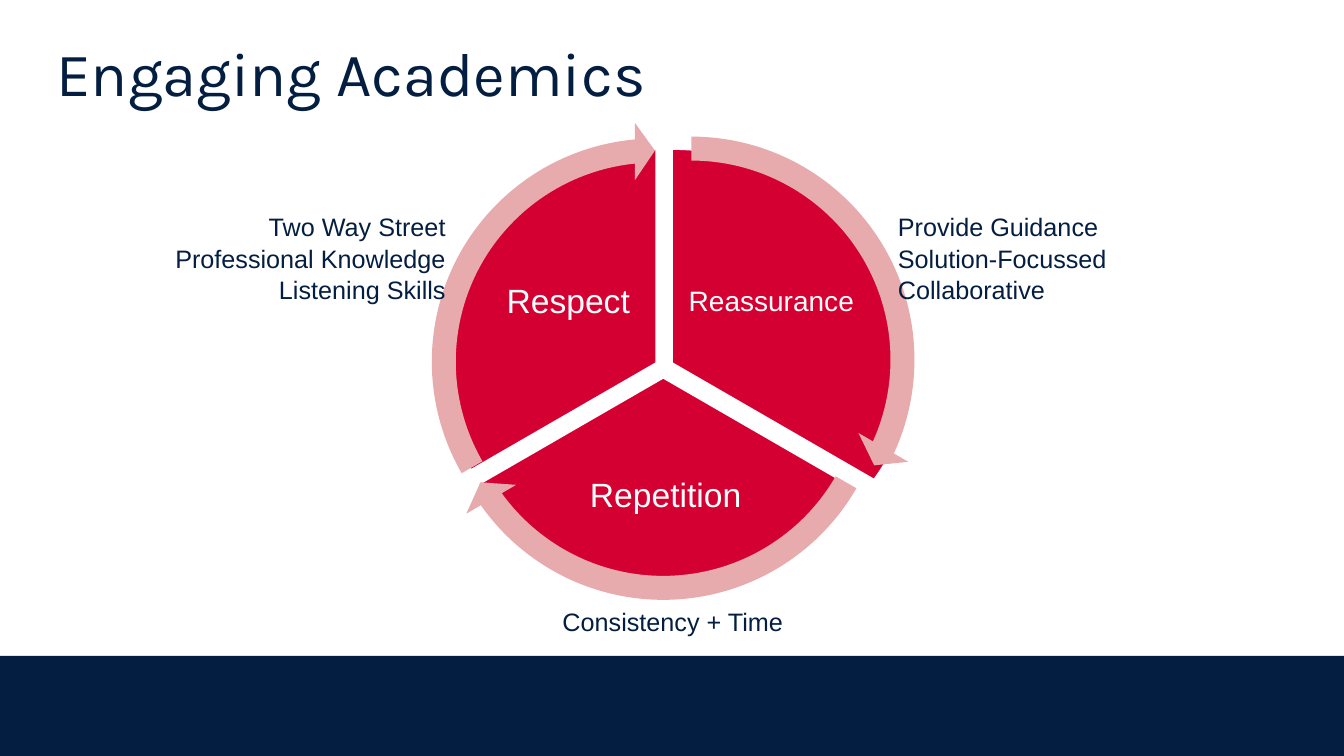
import pptx
import pptx.util
import pptx.dml.color
import pptx.enum.shapes
import pptx.enum.text

Cm = pptx.util.Cm
Pt = pptx.util.Pt
KIND = pptx.enum.shapes.MSO_SHAPE
ALIGN = pptx.enum.text.PP_ALIGN
ANCHOR = pptx.enum.text.MSO_ANCHOR

NAVY = "041E42"
INK = "041E41"
RED = "D50032"
PINK = "E7ABAE"
WHITE = "FFFFFF"


def paint(color, code):
    color.rgb = pptx.dml.color.RGBColor.from_string(code)


def put(item, values):
    for name, value in values.items():
        setattr(item, name, value)


def place(item, box):
    names = ("left", "top", "width", "height")
    put(item, dict(zip(names, map(Cm, box))))


def write(frame, lines, size, code, font="Arial", inset=None, para=None, **values):
    put(frame, {"word_wrap": True, **values})
    if inset is not None:
        sides = ("left", "top", "right", "bottom")
        put(frame, {"margin_" + side: Cm(inset) for side in sides})
    frame.text = "\n".join(lines)
    for line in frame.paragraphs:
        put(line, para or {})
        put(line.font, {"name": font, "size": Pt(size)})
        paint(line.font.color, code)


def draw(slide, kind, box, fill, turns=(), edge=None):
    shape = slide.shapes.add_shape(kind, *map(Cm, box))
    shape.shadow.inherit = False
    for spot, turn in enumerate(turns):
        shape.adjustments[spot] = turn
    shape.fill.solid()
    paint(shape.fill.fore_color, fill)
    if edge:
        shape.line.width = Pt(1)
        paint(shape.line.color, edge)
    else:
        shape.line.fill.background()


def label(slide, text, box, size):
    frame = slide.shapes.add_textbox(*map(Cm, box)).text_frame
    write(frame, [text], size, WHITE, inset=0.08,
          vertical_anchor=ANCHOR.MIDDLE,
          para={"alignment": ALIGN.CENTER, "line_spacing": 0.9})


def note(slide, lines, box, align):
    frame = slide.shapes.add_textbox(*map(Cm, box)).text_frame
    write(frame, lines, 18, INK,
          para={"alignment": align, "line_spacing": 1.05})


def main():
    deck = pptx.Presentation()
    put(deck, {"slide_width": Cm(33.87), "slide_height": Cm(19.05)})
    slide = deck.slides.add_slide(deck.slide_layouts[5])

    draw(slide, KIND.RECTANGLE, (0, 16.53, 33.87, 2.52), NAVY)
    title = slide.shapes.title
    place(title, (1.42, 0.94, 31, 1.96))
    write(title.text_frame, ["Engaging Academics"], 44, INK, "Karla", 0,
          vertical_anchor=ANCHOR.MIDDLE,
          para={"alignment": ALIGN.LEFT, "line_spacing": 0.9})

    wheel = 10.77
    parts = [
        ("Reassurance", 20, (10.87, 3.76, 12.14, wheel), (162, 18),
         (17.27, 6.02, 4.34, 3.2)),
        ("Repetition", 24, (11.33, 4.14, wheel, wheel), (18, 90),
         (13.89, 11.1, 5.77, 2.82)),
        ("Respect", 24, (11.15, 3.76, wheel, wheel), (90, 162),
         (12.4, 6.02, 3.84, 3.2)),
    ]
    for text, size, box, turns, spot in parts:
        draw(slide, KIND.PIE, box, RED, turns, WHITE)
        label(slide, text, spot, size)

    ring = 12.09
    arcs = [
        (11.38, 3.02, 14.73, 161.99),
        (10.67, 3.45, 86.72, 18),
        (10.46, 3.07, 158.73, 90),
    ]
    for left, top, end, start in arcs:
        draw(slide, KIND.CIRCULAR_ARROW, (left, top, ring, ring), PINK,
             (0.05, 3.28, end, start, 0.06))

    note(slide, ["Two Way Street", "Professional Knowledge", "Listening Skills"],
         (3.96, 5.16, 7.52, 2.57), ALIGN.RIGHT)
    note(slide, ["Provide Guidance", "Solution-Focussed", "Collaborative"],
         (22.38, 5.16, 8.36, 2.57), ALIGN.LEFT)
    note(slide, ["Consistency + Time"], (12.32, 15.11, 9.27, 1.02), ALIGN.CENTER)
    deck.save("out.pptx")


if __name__ == "__main__":
    main()
